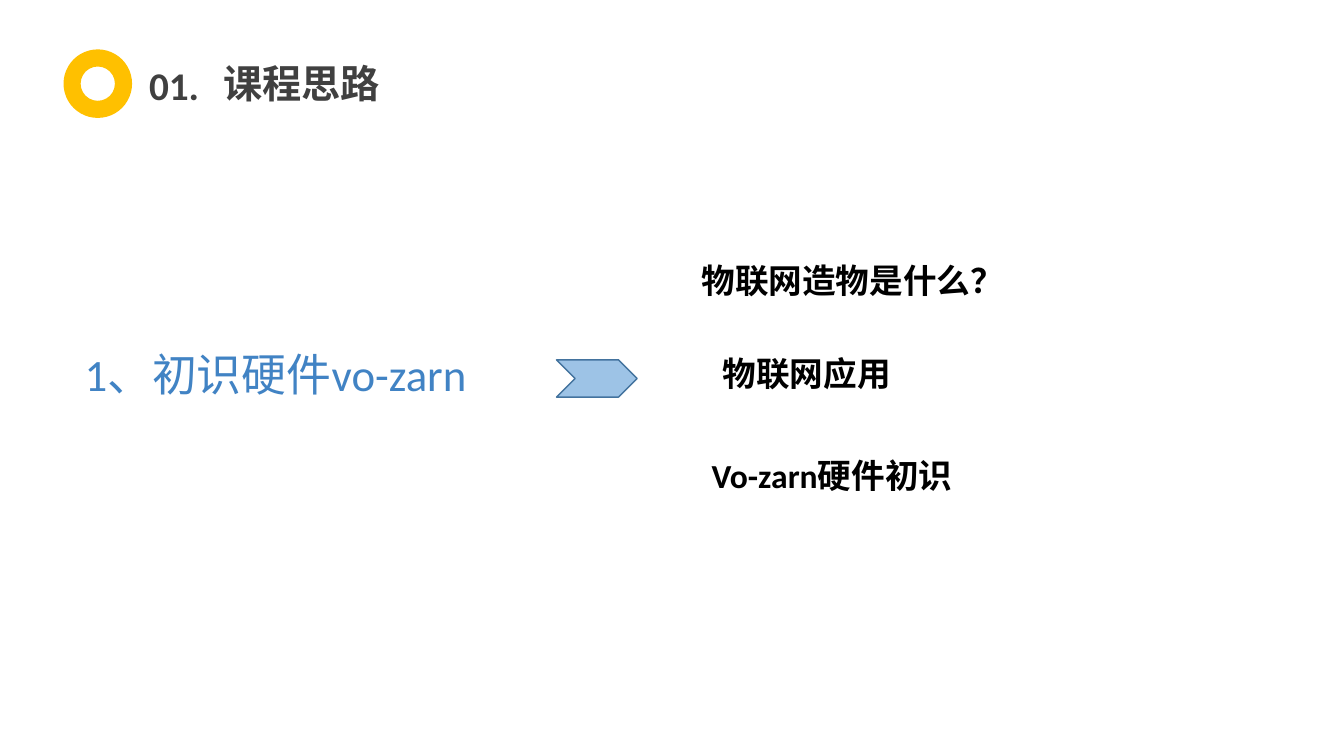
from dataclasses import dataclass

from pptx import Presentation
from pptx.dml.color import RGBColor
from pptx.enum.shapes import MSO_SHAPE
from pptx.enum.text import MSO_ANCHOR, MSO_AUTO_SIZE, PP_ALIGN
from pptx.util import Inches, Pt


@dataclass(frozen=True)
class Theme:
    font: str = "Calibri"
    heading: str = "404040"
    topic: str = "4183C4"
    body: str = "000000"
    ring: str = "FFC000"
    arrow: str = "9DC3E6"
    arrow_edge: str = "43739E"
    heading_size: int = 28
    topic_size: int = 32
    body_size: int = 24


THEME = Theme()


def add_label(page, text, place, size, color, bold=True, align=PP_ALIGN.LEFT, wrap=False):
    box = page.shapes.add_textbox(*map(Inches, place))
    frame = box.text_frame
    frame.word_wrap = wrap
    frame.auto_size = MSO_AUTO_SIZE.SHAPE_TO_FIT_TEXT
    frame.vertical_anchor = MSO_ANCHOR.TOP
    para = frame.paragraphs[0]
    para.alignment = align
    span = para.add_run()
    span.text = text
    span.font.name = THEME.font
    span.font.size = Pt(size)
    span.font.bold = bold
    span.font.color.rgb = RGBColor.from_string(color)


def add_figure(page, kind, place, fill, edge=None):
    figure = page.shapes.add_shape(kind, *map(Inches, place))
    figure.shadow.inherit = False
    figure.fill.solid()
    figure.fill.fore_color.rgb = RGBColor.from_string(fill)
    if edge:
        figure.line.color.rgb = RGBColor.from_string(edge)
        figure.line.width = Pt(1)
    else:
        figure.line.fill.background()


def add_heading(page):
    add_label(page, "课程思路", (2.1, 0.54, 1.78, 0.57),
              THEME.heading_size, THEME.heading, align=PP_ALIGN.CENTER)
    add_label(page, "01.", (1.38, 0.56, 0.75, 0.57), THEME.heading_size, THEME.heading)
    add_figure(page, MSO_SHAPE.DONUT, (0.63, 0.49, 0.68, 0.68), THEME.ring)


def add_lesson(page):
    add_label(page, "1、初识硬件vo-zarn", (0.74, 3.39, 4.01, 0.64),
              THEME.topic_size, THEME.topic, bold=False, wrap=True)
    add_figure(page, MSO_SHAPE.CHEVRON, (5.52, 3.57, 0.8, 0.37),
               THEME.arrow, THEME.arrow_edge)
    points = [
        ("物联网造物是什么？", (6.86, 2.53, 3.38, 0.5)),
        ("物联网应用", (7.07, 3.45, 1.89, 0.5)),
        ("Vo-zarn硬件初识", (6.96, 4.46, 2.7, 0.5)),
    ]
    for text, place in points:
        add_label(page, text, place, THEME.body_size, THEME.body)


def main():
    deck = Presentation()
    deck.slide_width = Inches(13.33)
    deck.slide_height = Inches(7.5)
    page = deck.slides.add_slide(deck.slide_layouts[6])
    add_heading(page)
    add_lesson(page)
    deck.save("out.pptx")


if __name__ == "__main__":
    main()
